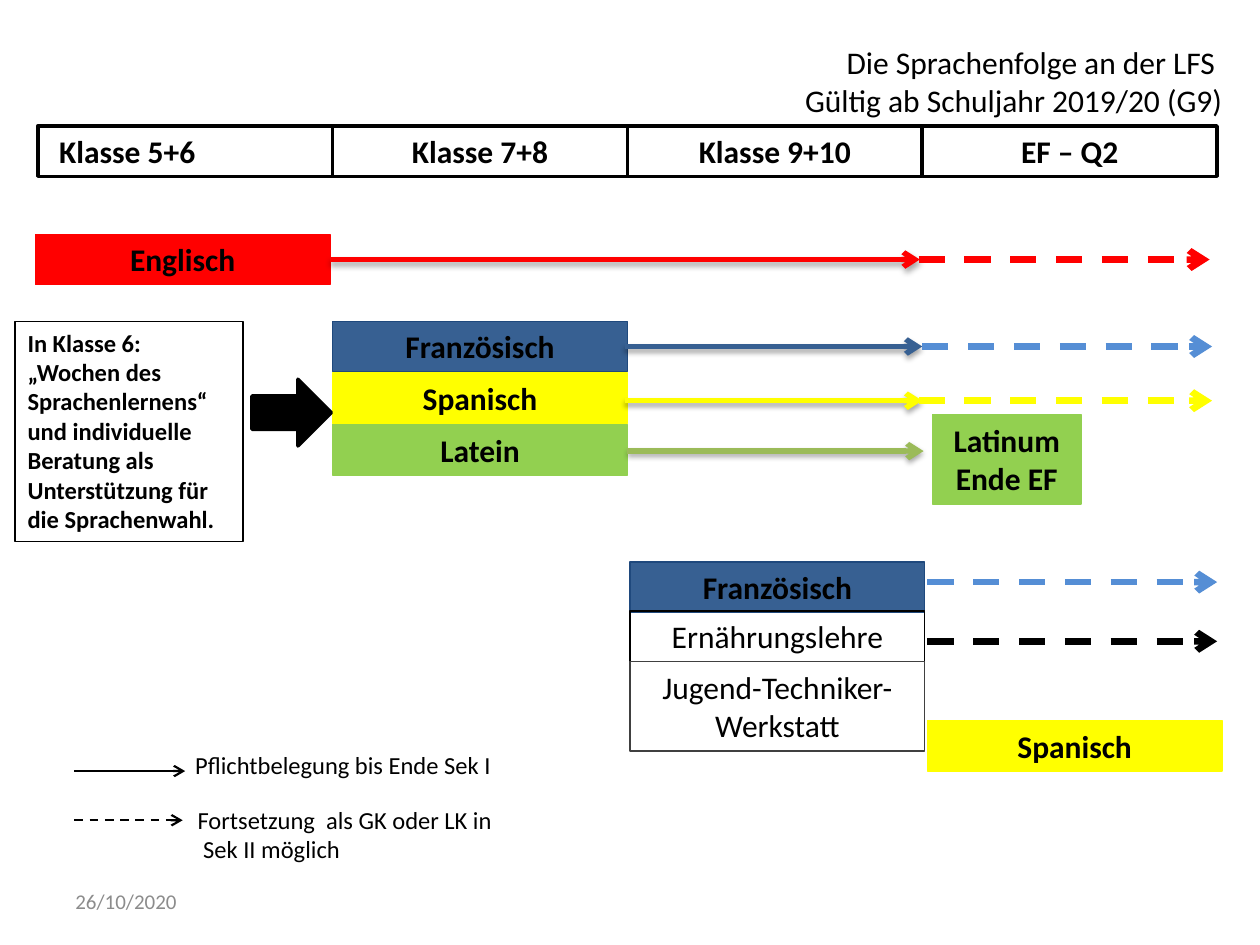
from lxml import etree
from pptx import Presentation
from pptx.dml.color import RGBColor
from pptx.enum.dml import MSO_LINE
from pptx.enum.shapes import MSO_CONNECTOR, MSO_SHAPE
from pptx.enum.text import MSO_ANCHOR, PP_ALIGN
from pptx.oxml.ns import qn
from pptx.util import Inches, Pt

BLACK = RGBColor(0x00, 0x00, 0x00)
WHITE = RGBColor(0xFF, 0xFF, 0xFF)
RED = RGBColor(0xFF, 0x00, 0x00)
YELLOW = RGBColor(0xFF, 0xFF, 0x00)
LIME = RGBColor(0x92, 0xD0, 0x50)
OLIVE = RGBColor(0x9B, 0xBB, 0x59)
BLUE = RGBColor(0x37, 0x60, 0x92)
NAVY = RGBColor(0x1F, 0x49, 0x7D)
SKY = RGBColor(0x55, 0x8E, 0xD5)
DARK_GRAY = RGBColor(0x40, 0x40, 0x40)
GRAY = RGBColor(0x8C, 0x8C, 0x8C)

COL_W, ROW_H = 2.34, 0.4


def write(tf, lines, size, align, bold=False, color=BLACK):
    tf.word_wrap = True
    for i, line in enumerate(lines):
        p = tf.paragraphs[0] if i == 0 else tf.add_paragraph()
        p.text = line
        p.alignment = align
        p.font.name = "Calibri"
        p.font.size = Pt(size)
        p.font.bold = bold
        p.font.color.rgb = color


def add_arrow(x1, x2, y, color, width, dashed=False, shadow=False):
    line = s.shapes.add_connector(
        MSO_CONNECTOR.STRAIGHT, Inches(x1), Inches(y), Inches(x2), Inches(y))
    line.line.color.rgb = color
    line.line.width = Pt(width)
    if dashed:
        line.line.dash_style = MSO_LINE.DASH
    sp_pr = line._element.spPr
    etree.SubElement(sp_pr.find(qn("a:ln")), qn("a:tailEnd"), type="arrow")
    effects = etree.SubElement(sp_pr, qn("a:effectLst"))
    if shadow:
        outer = etree.SubElement(
            effects, qn("a:outerShdw"), blurRad=str(Pt(3.1)),
            dist=str(Pt(1.8)), dir="5400000", rotWithShape="0")
        black = etree.SubElement(outer, qn("a:srgbClr"), val="000000")
        etree.SubElement(black, qn("a:alpha"), val="35000")


prs = Presentation()
prs.slide_width, prs.slide_height = Inches(10), Inches(7.5)
s = prs.slides.add_slide(prs.slide_layouts[6])

# Boxes: text, left, top, width, height, fill, line, line width, bold
grades = ["Klasse 5+6", "Klasse 7+8", "Klasse 9+10", "EF – Q2"]
boxes = [(grade, 0.3 + i * COL_W, 1, COL_W, ROW_H, WHITE, BLACK, 2, True)
         for i, grade in enumerate(grades)]
boxes += [
    ("Englisch", 0.28, 1.86, COL_W, ROW_H, RED, RED, 0.75, True),
    ("Französisch", 2.64, 2.55, COL_W, ROW_H, BLUE, NAVY, 0.75, True),
    ("Spanisch", 2.64, 2.96, COL_W, ROW_H, YELLOW, YELLOW, 0.75, True),
    ("Latein", 2.64, 3.37, COL_W, ROW_H, LIME, LIME, 0.75, True),
    ("Französisch", 5, 4.46, COL_W, ROW_H, BLUE, NAVY, 0.75, True),
    ("Ernährungslehre", 5, 4.85, COL_W, ROW_H, None, BLACK, 0.75, False),
    ("Jugend-Techniker-Werkstatt", 5, 5.25, COL_W, 0.71, None, DARK_GRAY, 0.75, False),
    ("Spanisch", 7.36, 5.72, COL_W, ROW_H, YELLOW, YELLOW, 0.75, True),
    ("Latinum Ende EF", 7.4, 3.29, 1.18, 0.71, LIME, LIME, 0.75, True),
    ("In Klasse 6: „Wochen des Sprachenlernens“ und individuelle Beratung "
     "als Unterstützung für die Sprachenwahl.",
     0.12, 2.55, 1.81, 1.75, WHITE, BLACK, 0.75, True),
]
for text, x, y, w, h, fill, outline, weight, bold in boxes:
    sp = s.shapes.add_shape(
        MSO_SHAPE.RECTANGLE, Inches(x), Inches(y), Inches(w), Inches(h))
    sp.shadow.inherit = False
    if fill is None:
        sp.fill.background()
    else:
        sp.fill.solid()
        sp.fill.fore_color.rgb = fill
    sp.line.color.rgb = outline
    sp.line.width = Pt(weight)
    tf = sp.text_frame
    tf.vertical_anchor = MSO_ANCHOR.TOP
    is_note = text.startswith("In Klasse")
    is_first_grade = text == grades[0]
    if is_first_grade:
        tf.margin_left = Inches(0.17)
    write(tf, [text], 14 if is_note else 18,
          PP_ALIGN.LEFT if is_note or is_first_grade else PP_ALIGN.CENTER, bold)

block_arrow = s.shapes.add_shape(
    MSO_SHAPE.RIGHT_ARROW, Inches(2), Inches(3.01), Inches(0.63), Inches(0.53))
block_arrow.shadow.inherit = False
block_arrow.fill.solid()
block_arrow.fill.fore_color.rgb = BLACK
block_arrow.line.color.rgb = BLACK
block_arrow.line.width = Pt(2)

# Compulsory courses
for x1, x2, y, color in [
    (2.62, 7.3, 2.06, RED),
    (4.96, 7.32, 2.75, BLUE),
    (4.96, 7.32, 3.18, YELLOW),
    (4.98, 7.33, 3.58, OLIVE),
]:
    add_arrow(x1, x2, y, color, 3, shadow=True)

# Optional continuation
for x1, x2, y, color in [
    (7.29, 9.6, 2.06, RED),
    (7.32, 9.62, 2.75, SKY),
    (7.29, 9.62, 3.18, YELLOW),
    (7.36, 9.66, 4.62, SKY),
    (7.36, 9.66, 5.09, BLACK),
]:
    add_arrow(x1, x2, y, color, 3.75, dashed=True)

# Legend
add_arrow(0.59, 1.47, 6.12, BLACK, 1.25)
add_arrow(0.59, 1.45, 6.51, BLACK, 1.25, dashed=True)

# Title, legend labels and date
for lines, x, y, w, h, size, align, anchor, color in [
    (["Die Sprachenfolge an der LFS ", "Gültig ab Schuljahr 2019/20 (G9)"],
     4.99, 0.29, 4.81, 1.31, 18, PP_ALIGN.RIGHT, MSO_ANCHOR.TOP, BLACK),
    (["Pflichtbelegung bis Ende Sek I"],
     1.45, 5.9, 2.83, 0.34, 14, PP_ALIGN.LEFT, MSO_ANCHOR.TOP, BLACK),
    (["Fortsetzung  als GK oder LK in", " Sek II möglich"],
     1.47, 6.34, 2.96, 0.57, 14, PP_ALIGN.LEFT, MSO_ANCHOR.TOP, BLACK),
    (["26/10/2020"],
     0.5, 6.95, 2.33, 0.4, 12, PP_ALIGN.LEFT, MSO_ANCHOR.MIDDLE, GRAY),
]:
    tb = s.shapes.add_textbox(Inches(x), Inches(y), Inches(w), Inches(h))
    tb.text_frame.vertical_anchor = anchor
    write(tb.text_frame, lines, size, align, color=color)

prs.save("out.pptx")
